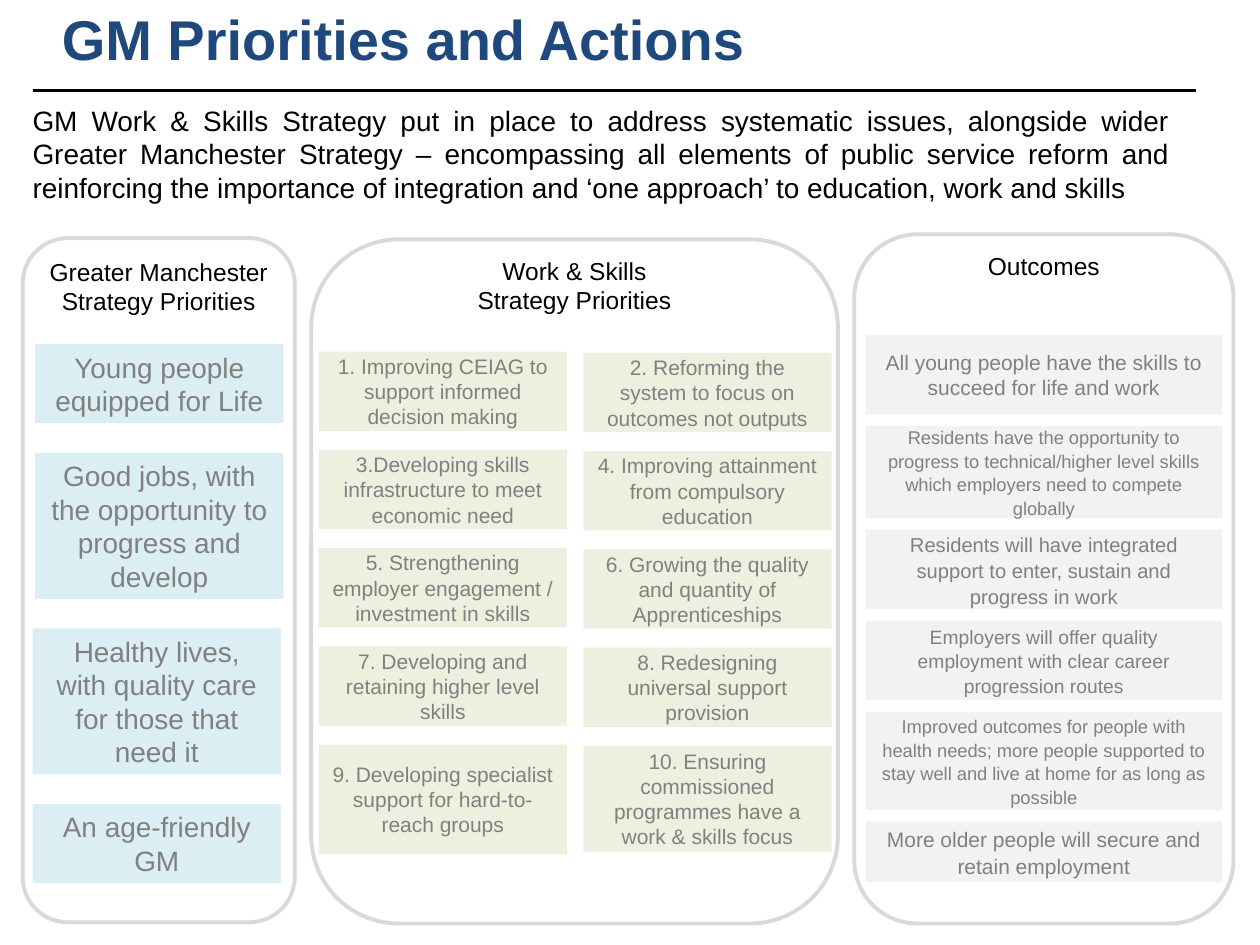
from lxml.etree import SubElement
from pptx import Presentation
from pptx.dml.color import RGBColor
from pptx.enum.shapes import MSO_CONNECTOR, MSO_SHAPE
from pptx.enum.text import MSO_ANCHOR, PP_ALIGN
from pptx.oxml.ns import qn
from pptx.util import Inches, Pt

# Content
TITLE = "GM Priorities and Actions"
INTRO = ("GM Work & Skills Strategy put in place to address systematic issues, "
         "alongside wider Greater Manchester Strategy – encompassing all elements of "
         "public service reform and reinforcing the importance of integration and "
         "‘one approach’ to education, work and skills")

# Panels: heading, heading box, panel box (left, top, width, height)
PANELS = [
    ("Greater Manchester Strategy Priorities", (0.24, 1.99, 2.04, 0.57), (0.18, 1.89, 2.16, 5.43)),
    ("Work & Skills Strategy Priorities", (3.66, 1.98, 1.8, 0.57), (2.47, 1.9, 4.18, 5.43)),
    ("Outcomes", (7.52, 1.94, 1.53, 0.34), (6.78, 1.86, 3.01, 5.47)),
]

# Cards: text, height, and any differences from the stack's defaults
GM_PRIORITIES = [
    ("Young people equipped for Life", 0.63, {"left": 0.28}),
    ("Good jobs, with the opportunity to progress and develop", 1.16, {"left": 0.28}),
    ("Healthy lives, with quality care for those that need it", 1.16, {}),
    ("An age-friendly GM", 0.63, {}),
]
ODD_SKILLS = [
    ("1. Improving CEIAG to support informed decision making", 0.63, {}),
    ("3.Developing skills infrastructure to meet economic need", 0.63, {}),
    ("5. Strengthening employer engagement / investment in skills", 0.63, {}),
    ("7. Developing and retaining higher level skills", 0.63, {}),
    ("9. Developing specialist support for hard-to-reach groups", 0.87, {}),
]
EVEN_SKILLS = [
    ("2. Reforming the system to focus on outcomes not outputs", 0.63, {}),
    ("4. Improving attainment from compulsory education", 0.63, {}),
    ("6. Growing the quality and quantity of Apprenticeships", 0.63, {}),
    ("8. Redesigning universal support provision", 0.63, {}),
    ("10. Ensuring commissioned programmes have a work & skills focus", 0.84, {}),
]
OUTCOMES = [
    ("All young people have the skills to succeed for life and work", 0.63, {"spacing": 1.0}),
    ("Residents have the opportunity to progress to technical/higher level skills "
     "which employers need to compete globally", 0.73, {"size": 10.5}),
    ("Residents will have integrated support to enter, sustain and progress in work",
     0.63, {"size": 11.5}),
    ("Employers will offer quality employment with clear career progression routes",
     0.63, {"size": 11}),
    ("Improved outcomes for people with health needs; more people supported to stay "
     "well and live at home for as long as possible", 0.78, {"size": 10.5}),
    ("More older people will secure and retain employment", 0.48, {}),
]

THEME = {
    "font": "Arial", "title": "1F497D", "ink": "000000", "card_text": "808080",
    "panel": "FFFFFF", "outline": "D9D9D9",
    "blue": "DBEEF4", "green": "EBF1DE", "grey": "F2F2F2",
    "title_size": 32, "body_size": 16, "heading_size": 14, "card_size": 12,
}

# Stacks: cards, left, top, bottom, width, fill, default text format
STACKS = [
    (GM_PRIORITIES, 0.26, 2.73, 7.01, 1.97, "blue", {"size": THEME["body_size"]}),
    (ODD_SKILLS, 2.53, 2.79, 6.78, 1.97, "green", {}),
    (EVEN_SKILLS, 4.63, 2.8, 6.76, 1.97, "green", {}),
    (OUTCOMES, 6.87, 2.66, 7.0, 2.83, "grey", {"spacing": 1.07}),
]


def colour(name):
    return RGBColor.from_string(THEME[name])


def write(shape, text, size=THEME["card_size"], ink="card_text", bold=False,
          align=PP_ALIGN.CENTER, anchor=MSO_ANCHOR.MIDDLE, spacing=1.0):
    frame = shape.text_frame
    frame.word_wrap = True
    frame.vertical_anchor = anchor
    paragraph = frame.paragraphs[0]
    paragraph.alignment = align
    paragraph.line_spacing = spacing
    run = paragraph.add_run()
    run.text = text
    run.font.name = THEME["font"]
    run.font.size = Pt(size)
    run.font.bold = bold
    run.font.color.rgb = colour(ink)


def add_box(slide, kind, box, fill, outline=None):
    shape = slide.shapes.add_shape(kind, *map(Inches, box))
    shape.shadow.inherit = False
    shape.fill.solid()
    shape.fill.fore_color.rgb = colour(fill)
    if outline:
        shape.line.color.rgb = colour(outline)
        shape.line.width = Pt(2.25)
    else:
        shape.line.fill.background()
    return shape


def add_stack(slide, cards, left, top, bottom, width, fill, defaults):
    """Spread cards from top to bottom with equal gaps."""
    gap = (bottom - top - sum(height for _, height, _ in cards)) / (len(cards) - 1)
    for text, height, changes in cards:
        style = {"left": left, **defaults, **changes}
        box = (style.pop("left"), top, width, height)
        write(add_box(slide, MSO_SHAPE.RECTANGLE, box, fill), text, **style)
        top += height + gap


def main():
    deck = Presentation()
    deck.slide_width, deck.slide_height = Inches(10), Inches(7.5)
    slide = deck.slides.add_slide(deck.slide_layouts[5])

    # Title and rule
    title = slide.shapes.title
    title.left, title.top, title.width, title.height = map(Inches, (0.39, -0.02, 9.61, 0.64))
    write(title, TITLE, size=THEME["title_size"], ink="title", bold=True, align=PP_ALIGN.LEFT)
    rule = slide.shapes.add_connector(
        MSO_CONNECTOR.STRAIGHT, *map(Inches, (0.26, 0.72, 9.49, 0.72)))
    rule.line.color.rgb = colour("ink")
    rule.line.width = Pt(1.75)
    SubElement(rule._element.spPr, qn("a:effectLst"))

    # Introduction
    intro = slide.shapes.add_textbox(*map(Inches, (0.16, 0.77, 9.22, 0.91)))
    write(intro, INTRO, size=THEME["body_size"], ink="ink",
          align=PP_ALIGN.JUSTIFY, anchor=MSO_ANCHOR.TOP)

    # Panels with headings
    for heading, heading_box, panel_box in PANELS:
        add_box(slide, MSO_SHAPE.ROUNDED_RECTANGLE, panel_box, "panel", "outline")
        label = slide.shapes.add_textbox(*map(Inches, heading_box))
        write(label, heading, size=THEME["heading_size"], ink="ink", anchor=MSO_ANCHOR.TOP)

    # Cards
    for stack in STACKS:
        add_stack(slide, *stack)

    deck.save("out.pptx")


if __name__ == "__main__":
    main()
